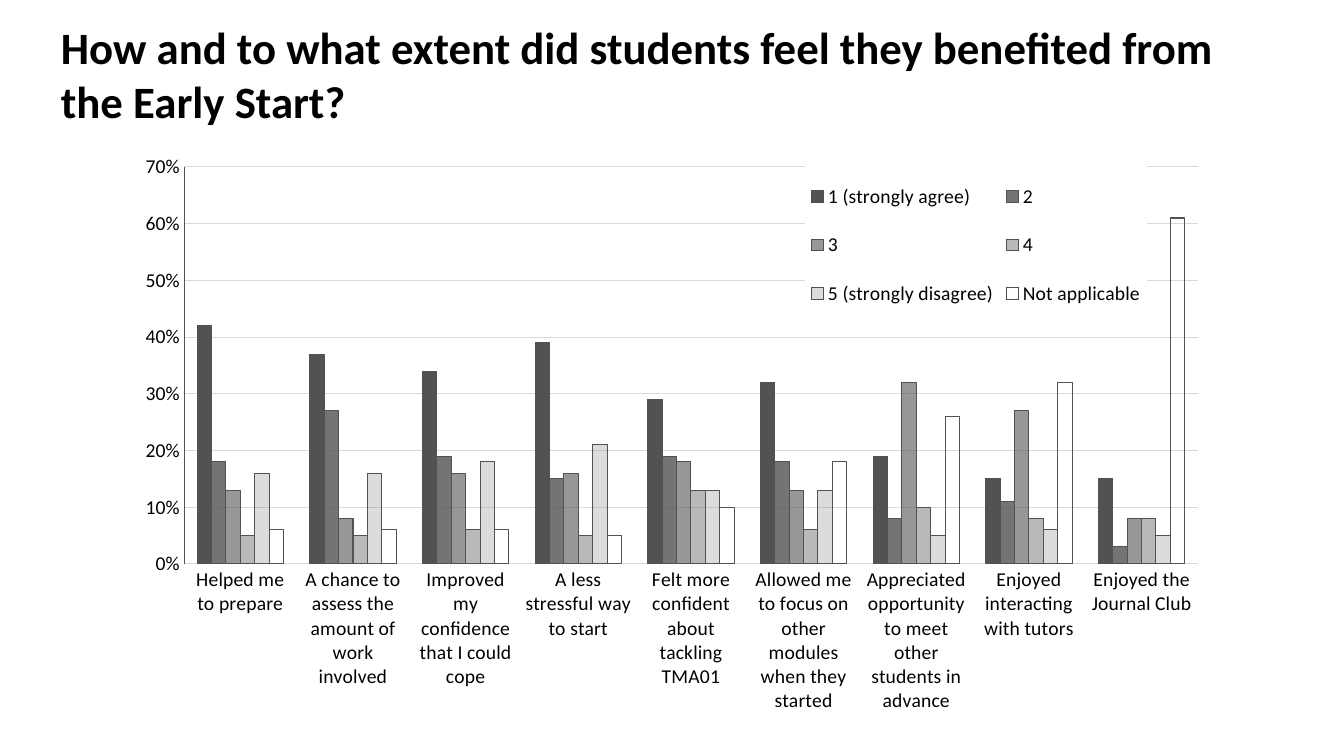
"""Build a slide charting how students benefited from the Early Start."""
from dataclasses import dataclass

from lxml import etree
from pptx import Presentation
from pptx.chart.data import CategoryChartData
from pptx.dml.color import RGBColor
from pptx.enum.chart import XL_CHART_TYPE, XL_LEGEND_POSITION, XL_TICK_MARK
from pptx.oxml import parse_xml
from pptx.oxml.ns import nsdecls, qn
from pptx.util import Emu, Pt

CLUSTERED = XL_CHART_TYPE.COLUMN_CLUSTERED
LEGEND_RIGHT = XL_LEGEND_POSITION.RIGHT
NO_TICKS = XL_TICK_MARK.NONE
EMU_PER_PX = 914400 / 100.8


@dataclass(frozen=True)
class Theme:
    """Colours and type sizes of the slide."""
    font: str = "Calibri"
    text: str = "000000"
    bar: str = "525252"
    grid: str = "D9D9D9"
    paper: str = "FFFFFF"
    title_size: int = 32
    chart_size: int = 14
    line_width: float = 0.75


THEME = Theme()
TITLE = "How and to what extent did students feel they benefited from the Early Start?"
TITLE_BOX = (51, 15, 1220, 119)
CHART_BOX = (124, 142, 1097, 582)
PLOT_BOX = (184, 167, 1014, 397)
LEGEND_BOX = (805, 160, 342, 170)

BENEFITS = [
    "Helped me to prepare",
    "A chance to assess the amount of work involved",
    "Improved my confidence that I could cope",
    "A less stressful way to start",
    "Felt more confident about tackling TMA01",
    "Allowed me to focus on other modules when they started",
    "Appreciated opportunity to meet other students in advance",
    "Enjoyed interacting with tutors",
    "Enjoyed the Journal Club",
]
RATINGS = {
    "1 (strongly agree)": (0.42, 0.37, 0.34, 0.39, 0.29, 0.32, 0.19, 0.15, 0.15),
    "2": (0.18, 0.27, 0.19, 0.15, 0.19, 0.18, 0.08, 0.11, 0.03),
    "3": (0.13, 0.08, 0.16, 0.16, 0.18, 0.13, 0.32, 0.27, 0.08),
    "4": (0.05, 0.05, 0.06, 0.05, 0.13, 0.06, 0.1, 0.08, 0.08),
    "5 (strongly disagree)": (0.16, 0.16, 0.18, 0.21, 0.13, 0.13, 0.05, 0.06, 0.05),
    "Not applicable": (0.06, 0.06, 0.06, 0.05, 0.1, 0.18, 0.26, 0.32, 0.61),
}


def px(length):
    """Turn pixels into EMU."""
    return Emu(round(length * EMU_PER_PX))


def style_font(font, size, bold=False):
    """Apply the theme's typeface and text colour."""
    font.name = THEME.font
    font.size = Pt(size)
    font.bold = bold
    font.color.rgb = RGBColor.from_string(THEME.text)


def style_line(line, color):
    """Apply a thin line in the given colour."""
    line.color.rgb = RGBColor.from_string(color)
    line.width = Pt(THEME.line_width)


def place(element, box, index, inner=False):
    """Fix a chart part at a pixel box on the slide."""
    previous = element.find(qn("c:layout"))
    if previous is not None:
        element.remove(previous)
    left, top, width, height = CHART_BOX
    shares = {
        "x": (box[0] - left) / width,
        "y": (box[1] - top) / height,
        "w": box[2] / width,
        "h": box[3] / height,
    }
    target = '<c:layoutTarget val="inner"/>' if inner else ""
    modes = '<c:xMode val="edge"/><c:yMode val="edge"/>'
    sizes = "".join(f'<c:{key} val="{share:.4f}"/>' for key, share in shares.items())
    element.insert(index, parse_xml(
        f'<c:layout {nsdecls("c")}><c:manualLayout>{target}{modes}{sizes}'
        "</c:manualLayout></c:layout>"))


def add_title(slide):
    """Add the slide's question."""
    title = slide.shapes.add_textbox(*map(px, TITLE_BOX)).text_frame
    title.word_wrap = True
    question = title.paragraphs[0]
    question.text = TITLE
    style_font(question.font, THEME.title_size, bold=True)


def style_axes(chart):
    """Format the benefit axis and the percentage axis."""
    benefits, shares = chart.category_axis, chart.value_axis
    for axis, color in ((benefits, THEME.grid), (shares, THEME.bar)):
        axis.major_tick_mark = axis.minor_tick_mark = NO_TICKS
        style_line(axis.format.line, color)
        style_font(axis.tick_labels.font, THEME.chart_size)
    shares.minimum_scale, shares.maximum_scale, shares.major_unit = 0, 0.7, 0.1
    shares.tick_labels.number_format = "0%"
    shares.tick_labels.number_format_is_linked = False
    style_line(shares.major_gridlines.format.line, THEME.grid)


def style_ratings(plot):
    """Fade the bars from solid to empty in equal steps."""
    plot.gap_width, plot.overlap = 182, 0
    plot.vary_by_categories = False
    for step, rating in enumerate(plot.series):
        rating.invert_if_negative = False
        style_line(rating.format.line, THEME.bar)
        fill = rating.format.fill
        opacity = 100 - 20 * step
        if opacity == 0:
            fill.background()
            continue
        fill.solid()
        fill.fore_color.rgb = RGBColor.from_string(THEME.bar)
        if opacity < 100:
            color = rating.format._element.spPr.find(qn("a:solidFill"))[0]
            etree.SubElement(color, qn("a:alpha"), val=str(opacity * 1000))


def add_legend(chart):
    """Add the legend on a white panel over the plot."""
    chart.has_legend = True
    legend = chart.legend
    legend.position = LEGEND_RIGHT
    legend.include_in_layout = True
    style_font(legend.font, THEME.chart_size)
    element = legend._element
    place(element, LEGEND_BOX, 1)
    element.find(qn("c:overlay")).addnext(parse_xml(
        f'<c:spPr {nsdecls("c", "a")}><a:solidFill><a:srgbClr val="{THEME.paper}"/>'
        "</a:solidFill><a:ln><a:noFill/></a:ln></c:spPr>"))


def add_ratings_chart(slide):
    """Add the clustered columns of ratings per benefit."""
    survey = CategoryChartData(number_format="0%")
    survey.categories = BENEFITS
    for rating, shares in RATINGS.items():
        survey.add_series(rating, shares)
    chart = slide.shapes.add_chart(CLUSTERED, *map(px, CHART_BOX), survey).chart
    chart.has_title = False
    style_font(chart.font, THEME.chart_size)
    style_axes(chart)
    style_ratings(chart.plots[0])
    add_legend(chart)
    place(chart._chartSpace.find(f".//{qn('c:plotArea')}"), PLOT_BOX, 0, inner=True)


def main():
    """Build and save the slide."""
    deck = Presentation()
    deck.slide_width, deck.slide_height = px(1344), px(756)
    slide = deck.slides.add_slide(deck.slide_layouts[6])
    add_title(slide)
    add_ratings_chart(slide)
    deck.save("out.pptx")


if __name__ == "__main__":
    main()
